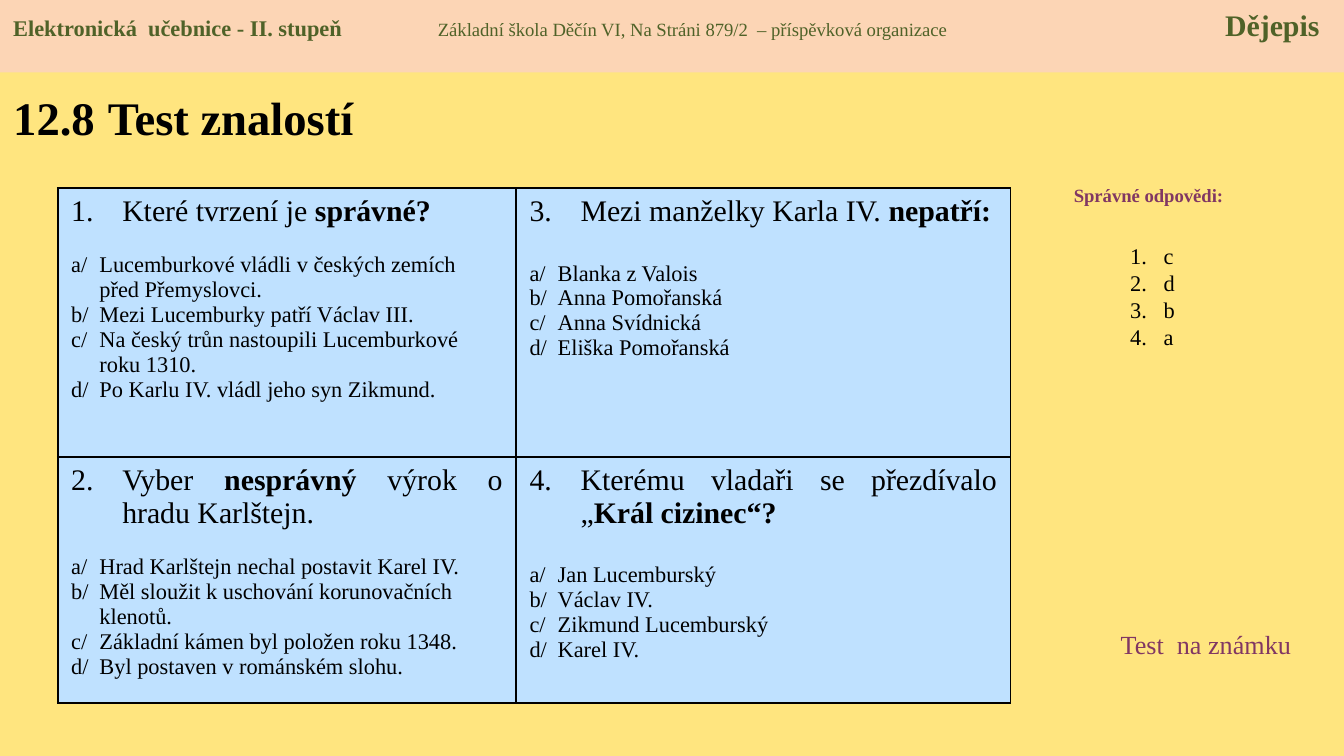
from dataclasses import dataclass

from lxml.etree import SubElement
from pptx import Presentation
from pptx.dml.color import RGBColor
from pptx.enum.shapes import MSO_SHAPE
from pptx.enum.text import MSO_ANCHOR, PP_ALIGN
from pptx.oxml.ns import qn
from pptx.util import Inches, Pt


@dataclass(frozen=True)
class Theme:
    font: str = "Times New Roman"
    page: str = "FFE57F"
    band: str = "FCD5B5"
    cell: str = "BFE1FF"
    ink: str = "000000"
    green: str = "4F6228"
    plum: str = "813763"
    space: int = 28
    title: int = 25
    large: int = 16
    note: int = 14
    body: int = 12
    small: int = 10


THEME = Theme()

# Question, number, gap below it in points, answers
TESTS = [
    [("Které tvrzení je *správné?", 1, 13.3,
      ["Lucemburkové vládli v českých zemích\vpřed Přemyslovci.",
       "Mezi Lucemburky patří Václav III.",
       "Na český trůn nastoupili Lucemburkové\vroku 1310.",
       "Po Karlu IV. vládl jeho syn Zikmund."]),
     ("Mezi manželky Karla IV. *nepatří:", 3, 17.7,
      ["Blanka z Valois", "Anna Pomořanská", "Anna Svídnická",
       "Eliška Pomořanská"])],
    [("Vyber *nesprávný* výrok o hradu Karlštejn.", 2, 13.3,
      ["Hrad Karlštejn nechal postavit Karel IV.",
       "Měl sloužit k uschování korunovačních\vklenotů.",
       "Základní kámen byl položen roku 1348.",
       "Byl postaven v románském slohu."]),
     ("Kterému vladaři se přezdívalo „*Král cizinec“?", 4, 17.7,
      ["Jan Lucemburský", "Václav IV.", "Zikmund Lucemburský",
       "Karel IV."])],
]


def paint(fill, color):
    fill.solid()
    fill.fore_color.rgb = RGBColor.from_string(color)


def write(frame, text, size=THEME.body, color=THEME.ink, bold=False,
          align=PP_ALIGN.LEFT, indent=0, number=None, tabs=(), before=0,
          pitch=None, sizes=None):
    """Add a paragraph; each * in the text switches bold on or off.

    sizes gives one size for each part between the stars.
    """
    para = frame.paragraphs[0]
    if para.runs:
        para = frame.add_paragraph()
    props = para._p.get_or_add_pPr()
    if indent:
        props.set("marL", str(Inches(indent)))
        props.set("indent", str(-Inches(indent)))
    if number:
        SubElement(props, qn("a:buAutoNum"), type="arabicPeriod",
                   startAt=str(number))
    if tabs:
        stops = SubElement(props, qn("a:tabLst"))
        for pos, kind in tabs:
            SubElement(stops, qn("a:tab"), pos=str(Inches(pos)), algn=kind)
    para.alignment = align
    if before:
        para.space_before = Pt(before)
    if pitch:
        para.line_spacing = Pt(pitch)
    for i, part in enumerate(text.split("*")):
        for j, line in enumerate(part.split("\v")):
            if j:
                para.add_line_break()
            run = para.add_run()
            run.text = line
            font = run.font
            font.name = THEME.font
            font.size = Pt(sizes[i] if sizes else size)
            font.bold = bold != (i % 2 == 1)
            font.color.rgb = RGBColor.from_string(color)


def add_box(slide, left, top, width, height, anchor=MSO_ANCHOR.TOP):
    box = slide.shapes.add_textbox(
        Inches(left), Inches(top), Inches(width), Inches(height))
    frame = box.text_frame
    frame.word_wrap = True
    frame.vertical_anchor = anchor
    return frame


def add_header(slide, left, top, width, height):
    band = slide.shapes.add_shape(
        MSO_SHAPE.RECTANGLE, Inches(left), Inches(top),
        Inches(width), Inches(height))
    band.shadow.inherit = False
    paint(band.fill, THEME.band)
    band.line.fill.background()
    frame = band.text_frame
    frame.word_wrap = True
    frame.vertical_anchor = MSO_ANCHOR.TOP
    write(frame,
          "Elektronická  učebnice - II. stupeň\t"
          "*Základní škola Děčín VI, Na Stráni 879/2  – příspěvková "
          "organizace\t*Dějepis",
          color=THEME.green, bold=True,
          sizes=(THEME.body, THEME.small, THEME.large),
          tabs=((3.16, "l"), (width - 0.28, "r")))


def add_border(cell):
    props = cell._tc.get_or_add_tcPr()
    for i, side in enumerate(("a:lnL", "a:lnR", "a:lnT", "a:lnB")):
        line = SubElement(props, qn(side), w=str(Pt(1)))
        fill = SubElement(line, qn("a:solidFill"))
        SubElement(fill, qn("a:srgbClr"), val=THEME.ink)
        props.remove(line)
        props.insert(i, line)


def fill_cell(cell, title, number, gap, answers):
    paint(cell.fill, THEME.cell)
    add_border(cell)
    frame = cell.text_frame
    write(frame, title, size=THEME.large, align=PP_ALIGN.JUSTIFY,
          indent=0.38, number=number)
    for i, (mark, answer) in enumerate(zip("abcd", answers)):
        write(frame, f"{mark}/\t{answer}", indent=0.21,
              before=0 if i else gap)


def add_test(slide, left, top, widths, heights):
    table = slide.shapes.add_table(
        len(heights), len(widths), Inches(left), Inches(top),
        Inches(sum(widths)), Inches(sum(heights))).table
    for col, width in zip(table.columns, widths):
        col.width = Inches(width)
    for row, height, tests in zip(table.rows, heights, TESTS):
        row.height = Inches(height)
        for cell, test in zip(row.cells, tests):
            fill_cell(cell, *test)


def add_key(slide, left, top, width):
    """Place the heading and list of right answers."""
    head = add_box(slide, left, top, width, 0.27)
    write(head, "Správné odpovědi:", size=THEME.small, color=THEME.plum,
          bold=True, align=PP_ALIGN.CENTER)
    frame = add_box(slide, left + 0.55, top + 0.43, 0.55, 1.1)
    for i, mark in enumerate("cdba", 1):
        write(frame, mark, indent=0.25, number=i, pitch=14.5)


def main():
    deck = Presentation()
    deck.slide_width = Inches(10)
    deck.slide_height = deck.slide_width * 9 // 16
    slide = deck.slides.add_slide(deck.slide_layouts[6])
    paint(slide.background.fill, THEME.page)
    title = add_box(slide, 0, 0.53, 3.62, 0.65, MSO_ANCHOR.MIDDLE)
    write(title, "12.8* *Test znalostí", bold=True,
          sizes=(THEME.title, THEME.space, THEME.title))
    add_key(slide, 7.76, 1.32, 1.57)
    add_test(slide, 0.43, 1.4, (3.41, 3.68), (2, 1.83))
    note = add_box(slide, 8.24, 4.63, 1.57, 0.34)
    write(note, "Test  na známku", size=THEME.note, color=THEME.plum)
    add_header(slide, 0, 0, 10, 0.54)
    deck.save("out.pptx")


if __name__ == "__main__":
    main()
